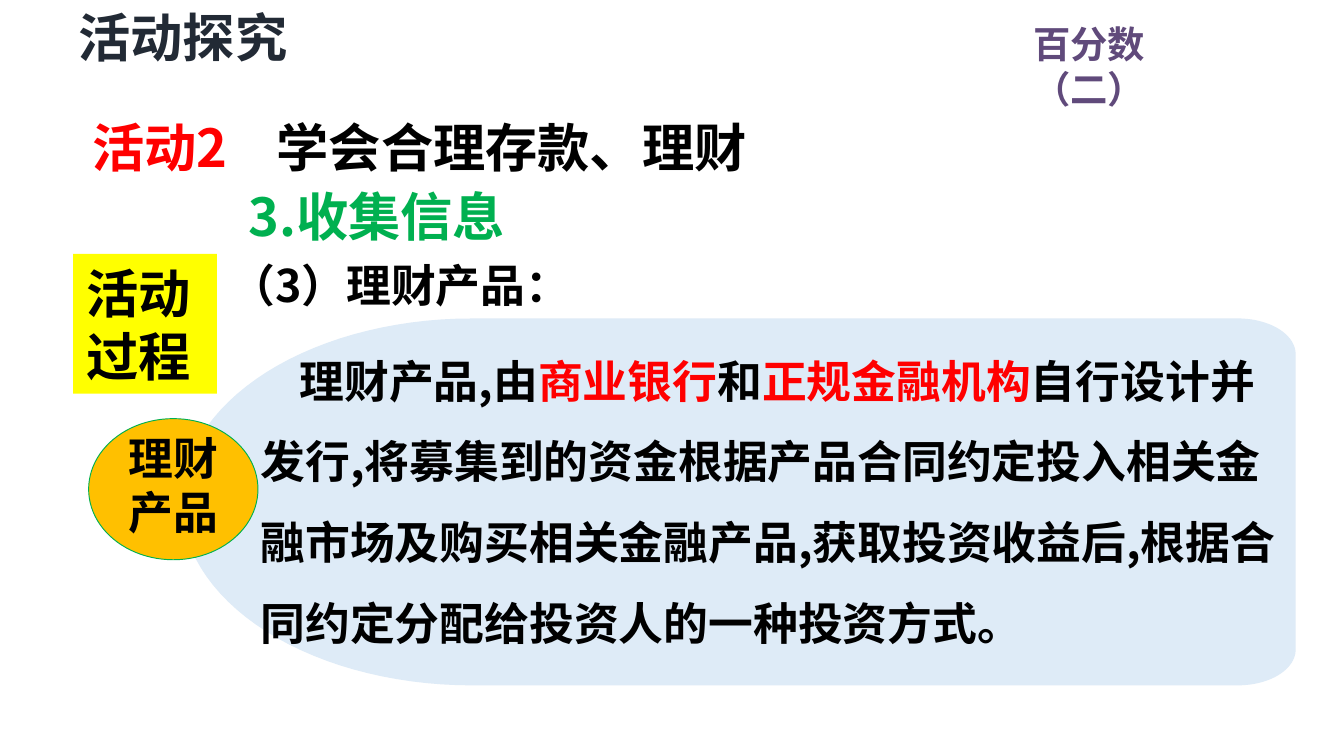
"""Build the lesson slide about wealth-management products."""
from math import cos, radians, sin

from pptx import Presentation
from pptx.dml.color import RGBColor
from pptx.enum.shapes import MSO_SHAPE as Shape
from pptx.enum.text import MSO_ANCHOR as Anchor, PP_ALIGN as Align
from pptx.oxml.ns import qn
from pptx.util import Pt
from lxml.etree import SubElement

PX = 4572
FONT = "Noto Sans CJK SC"
BLACK, RED, GREEN = "000000", "FF0000", "00B050"


def color(value):
    return RGBColor.from_string(value)


def write(shape, *runs, size=24, align=Align.LEFT, anchor=Anchor.TOP,
          insets=(20, 10, 20, 10), spacing=None, indent=0, tab=0):
    frame = shape.text_frame
    frame.word_wrap = True
    frame.vertical_anchor = anchor
    (frame.margin_left, frame.margin_top,
     frame.margin_right, frame.margin_bottom) = [inset * PX for inset in insets]
    paragraph = frame.paragraphs[0]
    paragraph.alignment = align
    paragraph.line_spacing = spacing
    properties = paragraph._p.get_or_add_pPr()
    if indent:
        properties.set("indent", str(indent * PX))
    if tab:
        tabs = SubElement(properties, qn("a:tabLst"))
        SubElement(tabs, qn("a:tab"), pos=str(tab * PX), algn="l")
    for text, fill in runs:
        run = paragraph.add_run()
        run.text = text
        run.font.size = Pt(size)
        run.font.bold = True
        run.font.name = FONT
        run.font.color.rgb = color(fill)
        SubElement(run._r.get_or_add_rPr(), qn("a:ea"), typeface=FONT)


presentation = Presentation()
presentation.slide_width = 2000 * PX
presentation.slide_height = 1125 * PX
slide = presentation.slides.add_slide(presentation.slide_layouts[6])
shapes = slide.shapes

arcs = [
    (702, 747, 432, 273, 270, 90),
    (1842, 967, 86, 53, 90, 0),
    (1842, 527, 86, 53, 0, -90),
]
outline = []
for center_x, center_y, radius_x, radius_y, start, end in arcs:
    for angle in range(start, end - 1, -3):
        outline.append((round((center_x + radius_x * cos(radians(angle))) * PX),
                        round((center_y + radius_y * sin(radians(angle))) * PX)))
builder = shapes.build_freeform(*outline[0])
builder.add_line_segments(outline[1:], close=True)
panel = builder.convert_to_shape()
panel.shadow.inherit = False
panel.fill.solid()
panel.fill.fore_color.rgb = color("DEEBF7")
panel.line.fill.background()

definition = [
    ("理财产品,由", BLACK),
    ("商业银行", RED),
    ("和", BLACK),
    ("正规金融机构", RED),
    ("自行设计并发行,将募集到的资金根据产品合同约定投入相关金融市场及购买相关金融产品,"
     "获取投资收益后,根据合同约定分配给投资人的一种投资方式。", BLACK),
]
activity = [("活动2\t", RED), ("学会合理存款、理财", BLACK)]
middle = {"size": 28, "anchor": Anchor.MIDDLE}
text_boxes = [
    ((1378, 22, 346, 88), [("百分数（二）", "604A7B")], {"size": 20, "align": Align.RIGHT}),
    ((103, 0, 404, 110), [("活动探究", "222A35")], {"size": 28, "insets": (14, 8, 14, 8)}),
    ((368, 476, 1574, 504), definition, {"spacing": 1.5, "indent": 58}),
    ((323, 374, 676, 100), [("（3）理财产品：", BLACK)], {}),
    ((118, 162, 1056, 114), activity, {**middle, "tab": 274}),
    ((350, 264, 476, 114), [("3.收集信息", GREEN)], middle),
]
for place, runs, style in text_boxes:
    box = shapes.add_textbox(*[length * PX for length in place])
    write(box, *runs, **style)

product = shapes.add_shape(Shape.OVAL, 132 * PX, 623 * PX, 252 * PX, 210 * PX)
product.line.color.rgb = color(GREEN)
product.line.width = Pt(0.5)
process = shapes.add_shape(Shape.RECTANGLE, 109 * PX, 378 * PX, 214 * PX, 208 * PX)
process.line.fill.background()
for shape, fill in [(product, "FFC000"), (process, "FFFF00")]:
    shape.shadow.inherit = False
    shape.fill.solid()
    shape.fill.fore_color.rgb = color(fill)
write(product, ("理财产品", BLACK), align=Align.CENTER, anchor=Anchor.MIDDLE,
      insets=(20, 10, 20, 24))
write(process, ("活动过程", BLACK), **middle)

presentation.save("out.pptx")
